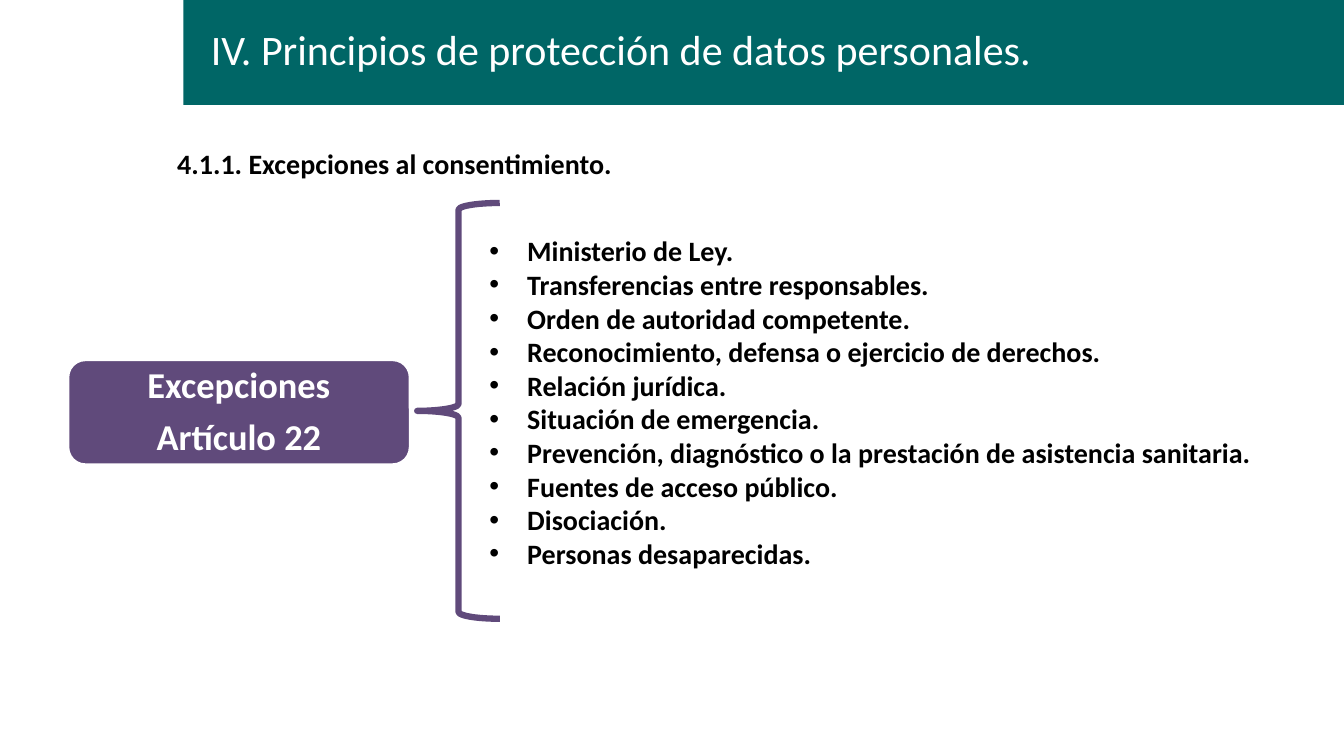
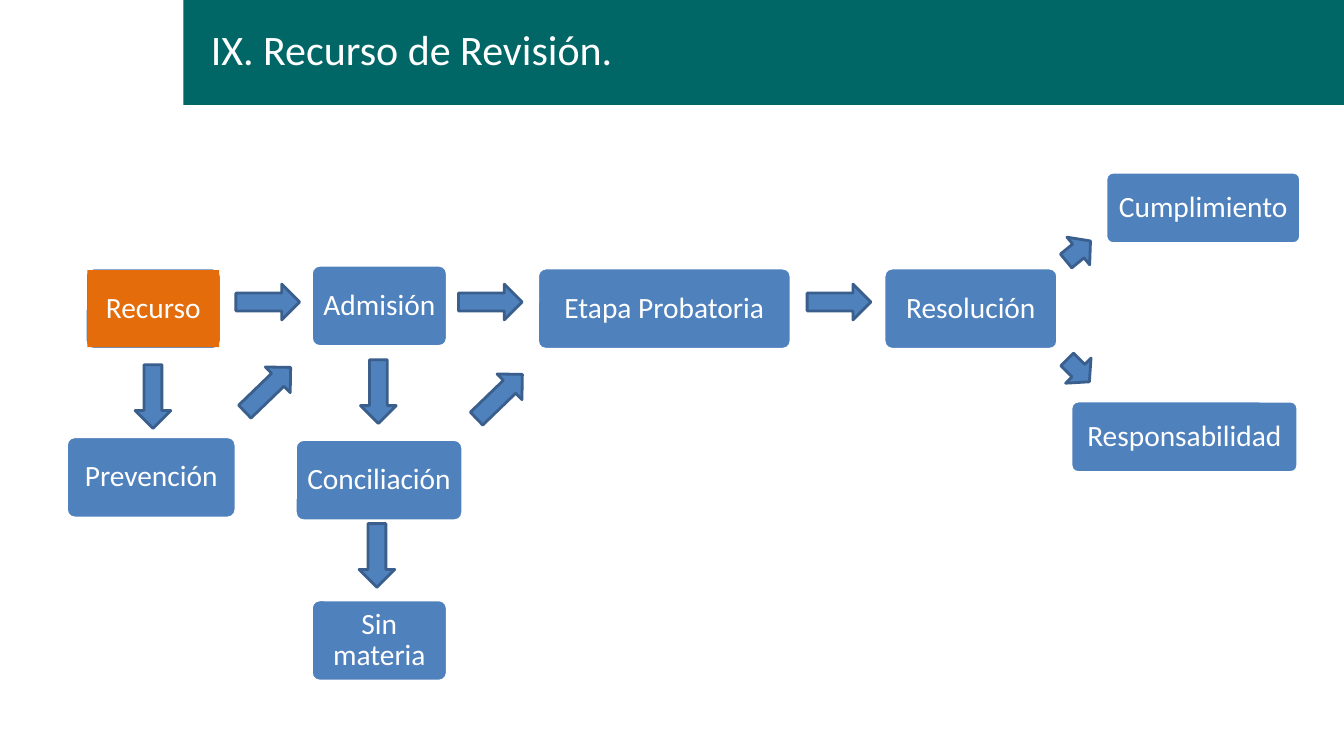
from lxml import etree
from pptx import Presentation
from pptx.dml.color import RGBColor
from pptx.enum import shapes, text
from pptx.oxml.ns import qn
from pptx.util import Pt

FONT = "Calibri"
TEAL, PURPLE, BLUE, NAVY, ORANGE = "006666", "604A7B", "4F81BD", "3A5F8C", "E46C0A"
WHITE, BLACK = "FFFFFF", "000000"
KIND, ALIGN = shapes.MSO_SHAPE, text.PP_ALIGN

EXCEPTIONS = [
    "Ministerio de Ley.",
    "Transferencias entre responsables.",
    "Orden de autoridad competente.",
    "Reconocimiento, defensa o ejercicio de derechos.",
    "Relación jurídica.",
    "Situación de emergencia.",
    "Prevención, diagnóstico o la prestación de asistencia sanitaria.",
    "Fuentes de acceso público.",
    "Disociación.",
    "Personas desaparecidas.",
]

# Label, left, top, width, height
STEPS = [
    ("Admisión", 222.5, 189.5, 97, 58),
    ("Conciliación", 211, 314, 119.5, 58),
    ("Sin materia", 222.5, 428.5, 97, 58),
    ("Responsabilidad", 765, 286.5, 162, 51),
    ("Resolución", 631.5, 191.5, 124, 58),
    ("Prevención", 47.5, 312, 121, 58),
    ("Etapa Probatoria", 384, 191.5, 181, 58),
    ("Cumplimiento", 790, 123, 139, 51),
]

# Left, top, length, turn in degrees
LONG, SHORT = 45.5, 22.5
ARROWS = [
    (168.5, 203, LONG, 0),
    (327.5, 203, LONG, 0),
    (576.5, 203, LONG, 0),
    (86.5, 270.5, LONG, 90),
    (247.5, 267, LONG, 90),
    (246.5, 384, LONG, 90),
    (334, 270.5, LONG, 316),
    (168.5, 265.5, LONG, 316),
    (759, 166.5, SHORT, 320.6),
    (759, 252, SHORT, 45.3),
]


def color(code):
    return RGBColor.from_string(code)


def shape(slide, kind, box, fill=None, line=None, width=2):
    item = slide.shapes.add_shape(kind, *map(Pt, box))
    item.shadow.inherit = False
    if fill:
        item.fill.solid()
        item.fill.fore_color.rgb = color(fill)
    else:
        item.fill.background()
    if line:
        item.line.color.rgb = color(line)
        item.line.width = Pt(width)
    else:
        item.line.fill.background()
    return item


def bullet(para, indent):
    props = para._p.get_or_add_pPr()
    props.set("marL", str(Pt(indent)))
    props.set("indent", str(-Pt(indent)))
    etree.SubElement(props, qn("a:buFont")).set("typeface", "Arial")
    etree.SubElement(props, qn("a:buChar")).set("char", "•")


def write(item, lines, size, tint, bold=False, align=ALIGN.LEFT, marks=False):
    frame = item.text_frame
    frame.word_wrap = True
    for i, line in enumerate(lines):
        para = frame.add_paragraph() if i else frame.paragraphs[0]
        para.text = line
        para.alignment = align
        if marks:
            bullet(para, 27)
        font = para.font
        font.name, font.size, font.bold = FONT, Pt(size), bold
        font.color.rgb = color(tint)
    return frame


def label(item, lines, size, bold=False):
    """Write centred white lines inside a filled shape."""
    frame = write(item, lines, size, WHITE, bold, ALIGN.CENTER)
    frame.vertical_anchor = text.MSO_ANCHOR.MIDDLE
    frame.margin_left = frame.margin_right = Pt(5)
    frame.margin_top = frame.margin_bottom = Pt(5)
    for para in frame.paragraphs:
        para.line_spacing = 0.9
    for para in frame.paragraphs[:-1]:
        para.space_after = Pt(size * 0.35)


def note(slide, box, lines, size, tint, **style):
    write(slide.shapes.add_textbox(*map(Pt, box)), lines, size, tint, **style)


def node(slide, box):
    item = shape(slide, KIND.ROUNDED_RECTANGLE, box, BLUE, WHITE)
    item.adjustments[0] = 0.1
    return item


def page(deck, title):
    slide = deck.slides.add_slide(deck.slide_layouts[6])
    shape(slide, KIND.RECTANGLE, (131, 0, 829, 75), TEAL)
    note(slide, (143.5, 13.5, 772, 44), [title], 30, WHITE)
    return slide


def consent(deck):
    slide = page(deck, "IV. Principios de protección de datos personales.")
    topic = shape(slide, KIND.ROUNDED_RECTANGLE, (48.5, 257, 244.5, 75), PURPLE, WHITE)
    label(topic, ["Excepciones", "Artículo 22"], 26, True)
    note(slide, (119.5, 101, 350, 32), ["4.1.1. Excepciones al consentimiento."],
         20, BLACK, bold=True)
    note(slide, (342.5, 163.5, 565, 293), EXCEPTIONS, 20, BLACK,
         bold=True, align=ALIGN.JUSTIFY, marks=True)
    shape(slide, KIND.LEFT_BRACE, (298, 145, 59, 297), None, PURPLE, 4.5)


def review(deck):
    slide = page(deck, "IX. Recurso de Revisión.")
    node(slide, (61, 191.5, 97, 58))
    start = shape(slide, KIND.RECTANGLE, (62.5, 193, 94, 55), ORANGE)
    label(start, ["Recurso"], 21)
    for name, *box in STEPS:
        label(node(slide, box), [name], 21)
    for left, top, length, turn in ARROWS:
        arrow = shape(slide, KIND.RIGHT_ARROW, (left, top, length, 25.5), BLUE, NAVY)
        arrow.rotation = turn


def main():
    deck = Presentation()
    deck.slide_width, deck.slide_height = Pt(960), Pt(540)
    consent(deck)
    review(deck)
    deck.save("out.pptx")


if __name__ == "__main__":
    main()
